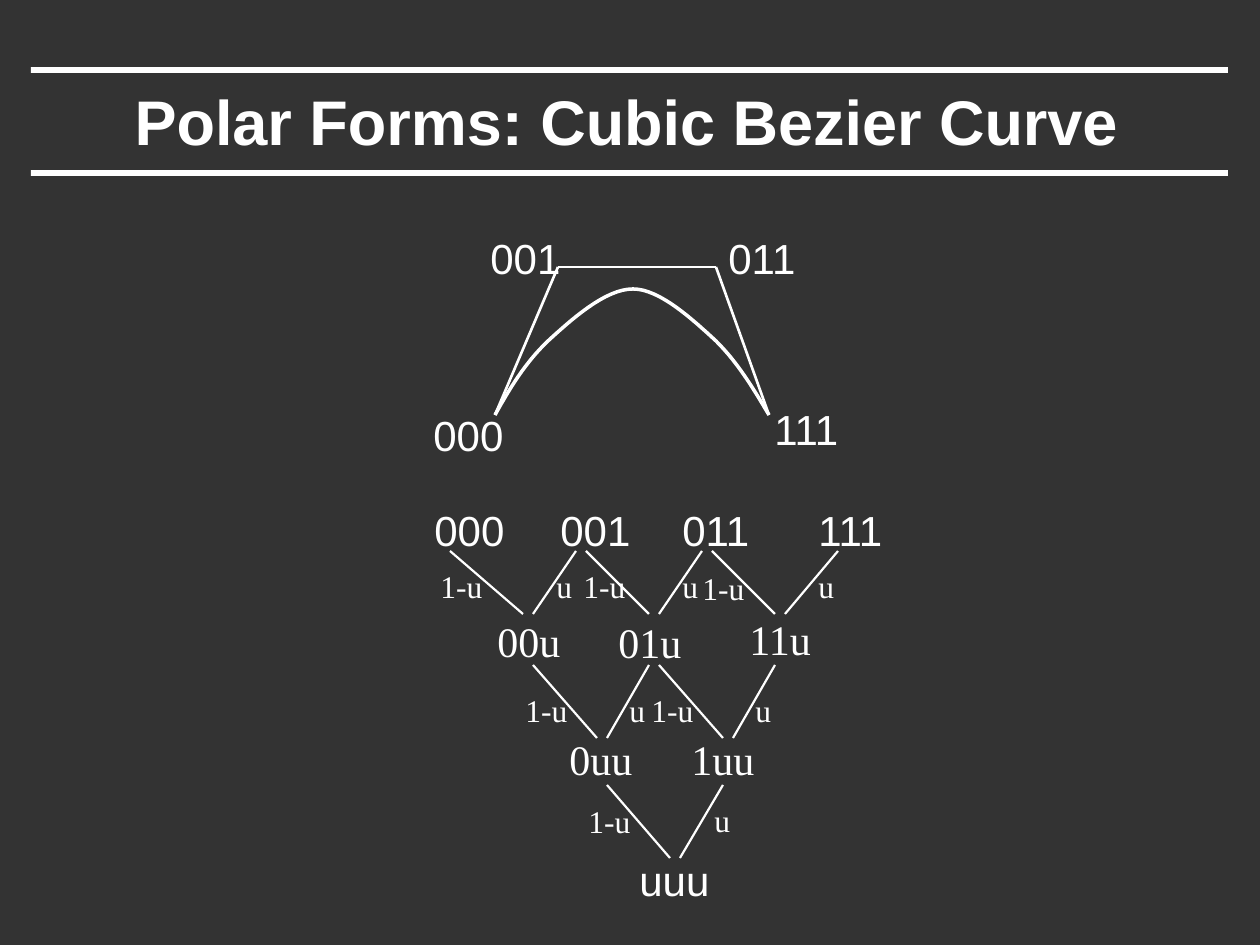
from dataclasses import dataclass

from lxml import etree
from pptx import Presentation
from pptx import util as u
from pptx.dml.color import RGBColor
from pptx.enum import shapes, text
from pptx.oxml import ns

SCALE = 914400 / 126


@dataclass(frozen=True)
class Theme:
    ground: RGBColor = RGBColor(0x33, 0x33, 0x33)
    ink: RGBColor = RGBColor(0xFF, 0xFF, 0xFF)
    sans: str = "Arial"
    serif: str = "Times New Roman"
    title_size: int = 36
    node_size: int = 24
    weight_size: int = 18
    curve_line: float = 2
    polygon_line: float = 1.5
    edge_line: float = 1.25


THEME = Theme()
CONTROL_POLYGON = [(495, 415), (558, 267), (716, 267), (769, 415)]
CONTROL_LABELS = [("000", 421, 403), ("001", 478, 226),
                  ("011", 716, 226), ("111", 762, 397)]
CURVE_START = (495, 415)
CURVE_PIECES = [
    ((510, 388), (525, 363), (548, 341)),
    ((571, 320), (605, 289), (633, 289)),
    ((660, 289), (693, 320), (716, 341)),
    ((738, 363), (753, 388), (769, 415)),
]
CURVE_STEPS = 16
EDGE_GAP = 5
INPUT_LABELS = [("000", 422, 498), ("001", 548, 498),
                ("011", 670, 498), ("111", 806, 498)]
NODE_CENTRES = [(445, 581, 707, 843), (528, 654, 780), (602, 728), (675,)]


@dataclass(frozen=True)
class Tier:
    top: int
    bottom: int
    weights: list
    nodes: list
    node_font: str


TIERS = [
    Tier(551, 614,
         [("1-u", 428, 561), ("u", 544, 561), ("1-u", 571, 561),
          ("u", 670, 561), ("1-u", 690, 563), ("u", 806, 561)],
         [("00u", 485, 609), ("01u", 606, 610), ("11u", 737, 607)], THEME.serif),
    Tier(665, 738,
         [("1-u", 513, 685), ("u", 617, 685), ("1-u", 639, 685), ("u", 743, 685)],
         [("0uu", 557, 727), ("1uu", 679, 727)], THEME.serif),
    Tier(785, 858,
         [("1-u", 576, 796), ("u", 702, 795)],
         [("uuu", 627, 848)], THEME.sans),
]


def px(length):
    return u.Emu(round(length * SCALE))


def add_span(para, words, font, size, bold=False):
    span = para.add_run()
    span.text = words
    span.font.name = font
    span.font.size = u.Pt(size)
    span.font.bold = bold
    span.font.color.rgb = THEME.ink


def add_title(page, words):
    title = page.shapes.title
    title.left, title.top, title.width, title.height = map(px, (93, 73, 1067, 95))
    frame = title.text_frame
    frame.auto_size = text.MSO_AUTO_SIZE.NONE
    frame.vertical_anchor = text.MSO_ANCHOR.MIDDLE
    para = frame.paragraphs[0]
    para.alignment = text.PP_ALIGN.CENTER
    add_span(para, words, THEME.sans, THEME.title_size, bold=True)


def add_bar(page, top):
    bar = page.shapes.add_shape(
        shapes.MSO_SHAPE.RECTANGLE, px(31), px(top), px(1197), px(6))
    bar.shadow.inherit = False
    bar.fill.solid()
    bar.fill.fore_color.rgb = THEME.ink
    bar.line.fill.background()


def add_label(parent, words, left, top, width, height, font, size):
    box = parent.shapes.add_textbox(px(left), px(top), px(width), px(height))
    frame = box.text_frame
    frame.word_wrap = False
    frame.auto_size = text.MSO_AUTO_SIZE.SHAPE_TO_FIT_TEXT
    add_span(frame.paragraphs[0], words, font, size)


def add_nodes(parent, labels, font):
    width = 96 if font == THEME.sans else 88
    for words, left, top in labels:
        add_label(parent, words, left, top, width, 63, font, THEME.node_size)


def add_weights(parent, labels):
    for words, left, top in labels:
        width = 42 if words == "u" else 67
        add_label(parent, words, left, top, width, 50,
                  THEME.serif, THEME.weight_size)


def add_line(parent, start, end, weight):
    line = parent.shapes.add_connector(
        shapes.MSO_CONNECTOR.STRAIGHT, *map(px, (*start, *end)))
    line.line.color.rgb = THEME.ink
    line.line.width = u.Pt(weight)
    properties = line._element.spPr
    etree.SubElement(properties, ns.qn("a:effectLst"))


def cubic_point(points, t):
    factors = ((1 - t) ** 3, 3 * t * (1 - t) ** 2, 3 * t ** 2 * (1 - t), t ** 3)
    return tuple(px(sum(f * point[axis] for f, point in zip(factors, points)))
                 for axis in (0, 1))


def add_curve(page):
    builder = page.shapes.build_freeform(*map(px, CURVE_START))
    start = CURVE_START
    for piece in CURVE_PIECES:
        points = (start, *piece)
        builder.add_line_segments(
            [cubic_point(points, step / CURVE_STEPS)
             for step in range(1, CURVE_STEPS + 1)], close=False)
        start = piece[-1]
    curve = builder.convert_to_shape()
    curve.shadow.inherit = False
    curve.fill.background()
    curve.line.color.rgb = THEME.ink
    curve.line.width = u.Pt(THEME.curve_line)


def add_tier(page, tier, uppers, lowers):
    group = page.shapes.add_group_shape()
    for index, lower in enumerate(lowers):
        for side, upper in ((-1, uppers[index]), (1, uppers[index + 1])):
            add_line(group, (upper - side * EDGE_GAP, tier.top),
                     (lower + side * EDGE_GAP, tier.bottom), THEME.edge_line)
    add_weights(group, tier.weights)
    add_nodes(group, tier.nodes, tier.node_font)


def main():
    deck = Presentation()
    deck.slide_width, deck.slide_height = px(1260), px(945)
    page = deck.slides.add_slide(deck.slide_layouts[5])
    page.background.fill.solid()
    page.background.fill.fore_color.rgb = THEME.ground

    for top in (170, 67):
        add_bar(page, top)
    add_title(page, "Polar Forms: Cubic Bezier Curve")

    for start, end in zip(CONTROL_POLYGON, CONTROL_POLYGON[1:]):
        add_line(page, start, end, THEME.polygon_line)
    add_nodes(page, CONTROL_LABELS, THEME.sans)
    add_curve(page)

    add_nodes(page.shapes.add_group_shape(), INPUT_LABELS, THEME.sans)
    for tier, uppers, lowers in zip(TIERS, NODE_CENTRES, NODE_CENTRES[1:]):
        add_tier(page, tier, uppers, lowers)
    deck.save("out.pptx")


if __name__ == "__main__":
    main()
